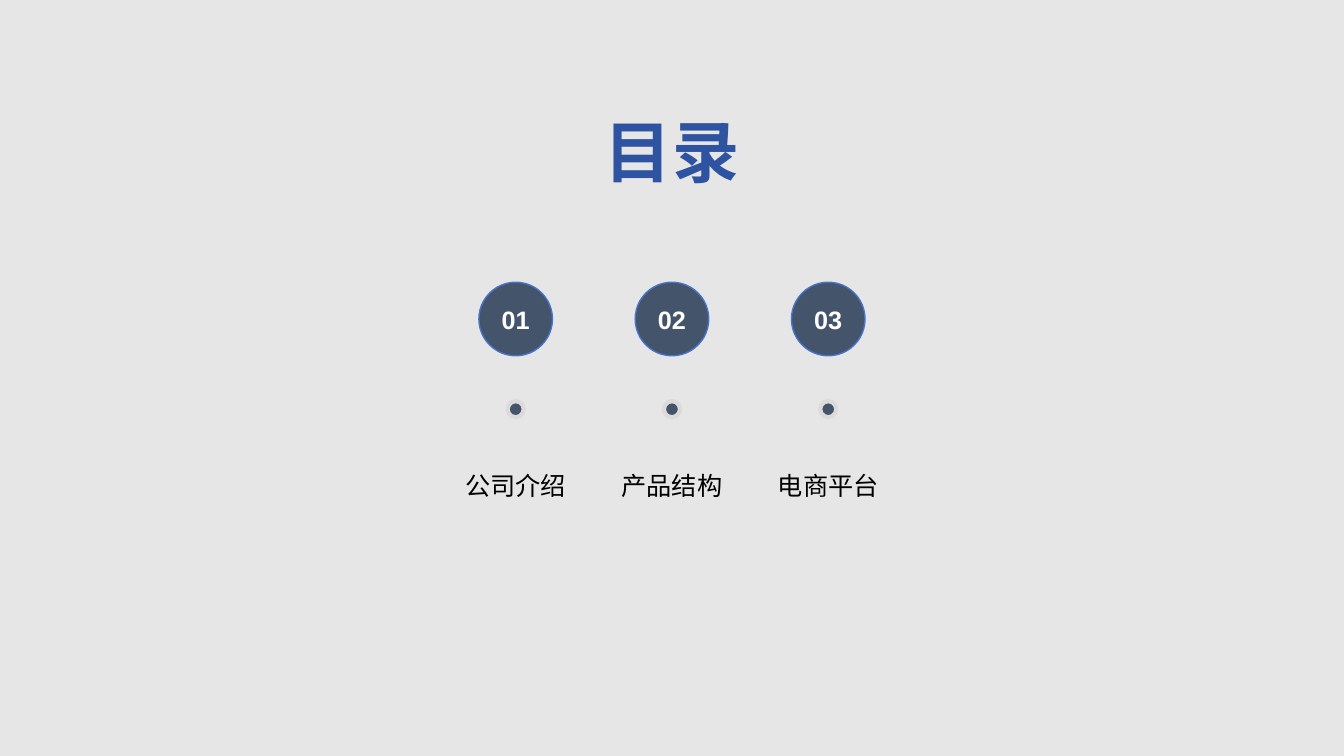
from pptx import Presentation
from pptx.dml.color import RGBColor
from pptx.enum.shapes import MSO_SHAPE as SHAPE
from pptx.enum.text import MSO_ANCHOR as ANCHOR, PP_ALIGN as ALIGN
from pptx.util import Inches, Pt

# Content
TITLE = "目录"
CHAPTERS = [("01", "公司介绍"), ("02", "产品结构"), ("03", "电商平台")]

# Style
FONT = "Arial"
GRAY = RGBColor(0xE7, 0xE6, 0xE6)
SLATE = RGBColor(0x44, 0x54, 0x6A)
BLUE = RGBColor(0x48, 0x74, 0xCB)
TITLE_BLUE = RGBColor(0x2E, 0x54, 0xA1)
HALO = RGBColor(0xDC, 0xDA, 0xDA)
WHITE = RGBColor(0xFF, 0xFF, 0xFF)
BLACK = RGBColor(0, 0, 0)

# Layout in inches
WIDTH, HEIGHT = 13.33, 7.5
CENTER = WIDTH / 2
PITCH = 1.55
CIRCLE, DOT = 0.73, 0.16
LABEL_W, LABEL_H = 1.33, 1.01
TITLE_W, TITLE_H = 2.38, 1.11


def write(sp, text, size, color, bold=False, anchor=ANCHOR.MIDDLE, wrap=False):
    tf = sp.text_frame
    tf.word_wrap = wrap
    tf.vertical_anchor = anchor
    p = tf.paragraphs[0]
    p.alignment = ALIGN.CENTER
    r = p.add_run()
    r.text = text
    r.font.name, r.font.size, r.font.bold = FONT, Pt(size), bold
    r.font.color.rgb = color
    return p


def add_box(center, top, width, height):
    return s.shapes.add_textbox(Inches(center - width / 2), Inches(top),
                                Inches(width), Inches(height))


def add_disc(center, top, size, line, line_width):
    sp = s.shapes.add_shape(SHAPE.OVAL, Inches(center - size / 2), Inches(top),
                            Inches(size), Inches(size))
    sp.shadow.inherit = False
    sp.fill.solid()
    sp.fill.fore_color.rgb = SLATE
    sp.line.color.rgb = line
    sp.line.width = Pt(line_width)
    return sp


prs = Presentation()
prs.slide_width, prs.slide_height = Inches(WIDTH), Inches(HEIGHT)
s = prs.slides.add_slide(prs.slide_layouts[6])
s.background.fill.solid()
s.background.fill.fore_color.rgb = GRAY

# Title
p = write(add_box(CENTER, 0.99, TITLE_W, TITLE_H), TITLE, 48, TITLE_BLUE, bold=True)
p.line_spacing = 0.9

# One column per chapter: number, dot, label
for i, (number, label) in enumerate(CHAPTERS):
    x = CENTER + (i - (len(CHAPTERS) - 1) / 2) * PITCH
    write(add_disc(x, 2.8, CIRCLE, BLUE, 1), number, 18, WHITE, bold=True)
    add_disc(x, 3.98, DOT, HALO, 3)
    write(add_box(x, 4.62, LABEL_W, LABEL_H), label, 18, BLACK,
          anchor=ANCHOR.TOP, wrap=True)

prs.save("out.pptx")
